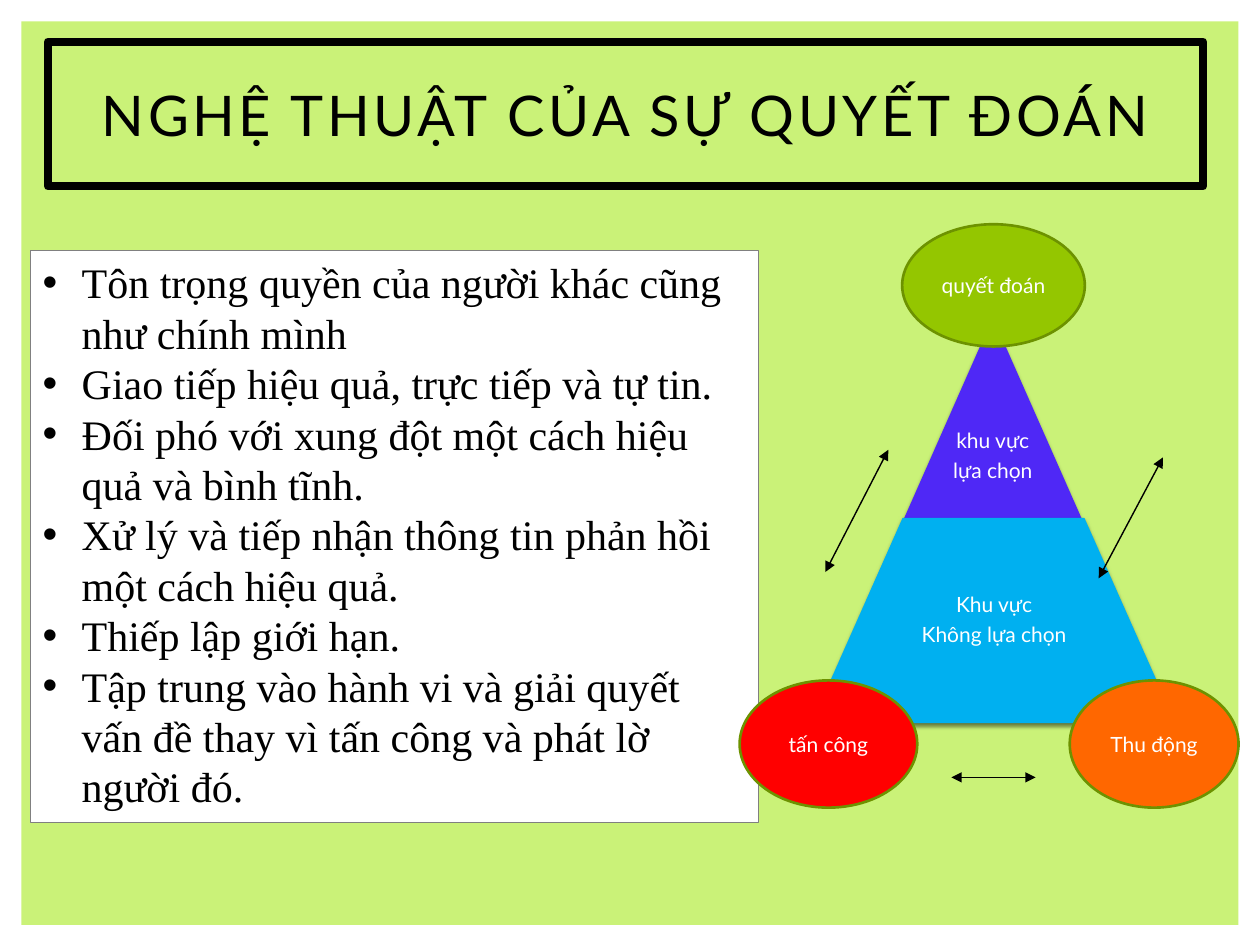
from dataclasses import dataclass

import pptx
import pptx.dml.color
import pptx.enum.shapes
import pptx.enum.text
import pptx.oxml
import pptx.oxml.ns
import pptx.util
from lxml import etree
from pptx.dml.color import RGBColor
from pptx.enum.shapes import MSO_SHAPE
from pptx.util import Inches, Pt

BLACK = RGBColor(0x00, 0x00, 0x00)
WHITE = RGBColor(0xFF, 0xFF, 0xFF)
GRAY = RGBColor(0x80, 0x80, 0x80)
LIME = RGBColor(0xCA, 0xF2, 0x78)
GREEN = RGBColor(0x94, 0xC6, 0x00)
DARK_GREEN = RGBColor(0x6D, 0x92, 0x00)
RED = RGBColor(0xFF, 0x00, 0x00)
ORANGE = RGBColor(0xFF, 0x67, 0x00)
VIOLET = RGBColor(0x4F, 0x28, 0xF6)
BLUE = RGBColor(0x00, 0xB0, 0xF0)

CENTER = pptx.enum.text.PP_ALIGN.CENTER
LEFT = pptx.enum.text.PP_ALIGN.LEFT
MIDDLE = pptx.enum.text.MSO_ANCHOR.MIDDLE
TOP = pptx.enum.text.MSO_ANCHOR.TOP
NAMESPACE = 'xmlns:a="http://schemas.openxmlformats.org/drawingml/2006/main"'


@dataclass(frozen=True)
class Box:
    left: float
    top: float
    width: float
    height: float

    def lengths(self):
        return [Inches(value) for value in (self.left, self.top, self.width, self.height)]


@dataclass(frozen=True)
class Attitude:
    label: str
    box: Box
    color: RGBColor


@dataclass(frozen=True)
class Zone:
    lines: tuple[str, ...]
    box: Box
    text_box: Box
    taper: float
    color: RGBColor


@dataclass(frozen=True)
class Arrow:
    start: tuple[float, float]
    end: tuple[float, float]


TITLE = "NGHỆ THUẬT CỦA SỰ QUYẾT ĐOÁN"
POINTS = (
    "Tôn trọng quyền của người khác cũng như chính mình",
    "Giao tiếp hiệu quả, trực tiếp và tự tin.",
    "Đối phó với xung đột một cách hiệu quả và bình tĩnh.",
    "Xử lý và tiếp nhận thông tin phản hồi một cách hiệu quả.",
    "Thiếp lập giới hạn.",
    "Tập trung vào hành vi và giải quyết vấn đề thay vì tấn công và phát lờ người đó.",
)
ZONES = (
    Zone(("khu vực", "lựa chọn"), Box(7.16, 2.52, 1.44, 1.63),
         Box(7.16, 3.1, 1.44, 1.05), 0.5, VIOLET),
    Zone(("Khu vực", "Không lựa chọn"), Box(6.44, 4.11, 2.89, 1.63),
         Box(6.95, 4.11, 1.88, 1.63), 0.444, BLUE),
)
ATTITUDES = (
    Attitude("quyết đoán", Box(7.16, 1.78, 1.45, 0.97), GREEN),
    Attitude("tấn công", Box(5.87, 5.4, 1.41, 1.01), RED),
    Attitude("Thu động", Box(8.49, 5.4, 1.34, 1.01), ORANGE),
)
ARROWS = (
    Arrow((6.55, 4.54), (7.05, 3.57)),
    Arrow((7.55, 6.17), (8.22, 6.17)),
    Arrow((8.72, 4.59), (9.23, 3.63)),
)


def add_figure(slide, kind, box: Box, fill=None, line=None, line_width: float = 0):
    shape = slide.shapes.add_shape(kind, *box.lengths())
    shape.shadow.inherit = False
    if fill is None:
        shape.fill.background()
    else:
        shape.fill.solid()
        shape.fill.fore_color.rgb = fill
    if line is None:
        shape.line.fill.background()
    else:
        shape.line.color.rgb = line
        shape.line.width = Pt(line_width)
    return shape


def write_lines(shape, lines, size, color=WHITE, font="Lato", align=CENTER, anchor=MIDDLE):
    """Write one paragraph per line and return the paragraphs."""
    frame = shape.text_frame
    frame.word_wrap = True
    frame.vertical_anchor = anchor
    for index, line in enumerate(lines):
        paragraph = frame.add_paragraph() if index else frame.paragraphs[0]
        paragraph.alignment = align
        run = paragraph.add_run()
        run.text = line
        run.font.size = Pt(size)
        run.font.name = font
        run.font.color.rgb = color
    return frame.paragraphs


def add_title(slide) -> None:
    shape = add_figure(slide, MSO_SHAPE.RECTANGLE, Box(0.38, 0.33, 9.17, 1.15),
                       line=BLACK, line_width=4.5)
    etree.SubElement(shape.line._get_or_add_ln(), pptx.oxml.ns.qn("a:round"))
    title = write_lines(shape, [TITLE], 32, BLACK)[0]
    title.runs[0].font._element.set("spc", "200")


def add_points(slide) -> None:
    shape = add_figure(slide, MSO_SHAPE.RECTANGLE, Box(0.24, 1.99, 5.78, 4.54),
                       WHITE, GRAY, 0.75)
    for paragraph in write_lines(shape, POINTS, 24, BLACK, "Times New Roman", LEFT, TOP):
        properties = paragraph._p.get_or_add_pPr()
        properties.set("marL", str(Inches(0.31)))
        properties.set("indent", str(-Inches(0.31)))
        for bullet in ('buFont {} typeface="Arial"', 'buChar {} char="•"'):
            properties.append(pptx.oxml.parse_xml(f"<a:{bullet.format(NAMESPACE)}/>"))


def add_zone(slide, zone: Zone) -> None:
    shape = add_figure(slide, MSO_SHAPE.TRAPEZOID, zone.box, zone.color)
    shape.adjustments[0] = zone.taper
    effects = shape._element.spPr.find(pptx.oxml.ns.qn("a:effectLst"))
    effects.append(pptx.oxml.parse_xml(
        f'<a:outerShdw {NAMESPACE} blurRad="{Pt(2.5)}" dist="{Pt(2)}" dir="5400000" '
        'rotWithShape="0"><a:srgbClr val="000000"><a:alpha val="50000"/></a:srgbClr>'
        '</a:outerShdw>'))
    label = slide.shapes.add_textbox(*zone.text_box.lengths())
    frame = label.text_frame
    frame.margin_left = frame.margin_right = Inches(0.02)
    frame.margin_top = frame.margin_bottom = Inches(0.02)
    for paragraph in write_lines(label, zone.lines, 12):
        paragraph.line_spacing = 0.9
        paragraph.space_after = Pt(4.2)


def add_attitude(slide, attitude: Attitude) -> None:
    shape = add_figure(slide, MSO_SHAPE.OVAL, attitude.box, attitude.color, DARK_GREEN, 1.5)
    write_lines(shape, [attitude.label], 12)


def add_arrow(slide, arrow: Arrow) -> None:
    """Draw a line with a triangle at both ends."""
    points = [Inches(value) for value in arrow.start + arrow.end]
    connector = slide.shapes.add_connector(
        pptx.enum.shapes.MSO_CONNECTOR.STRAIGHT, *points)
    connector.line.color.rgb = BLACK
    connector.line.width = Pt(0.79)
    line = connector.line._get_or_add_ln()
    for end in ("a:headEnd", "a:tailEnd"):
        etree.SubElement(line, pptx.oxml.ns.qn(end), type="triangle")
    etree.SubElement(connector._element.spPr, pptx.oxml.ns.qn("a:effectLst"))


def main() -> None:
    presentation = pptx.Presentation()
    presentation.slide_width = Inches(10)
    presentation.slide_height = Inches(7.5)
    slide = presentation.slides.add_slide(presentation.slide_layouts[6])
    add_figure(slide, MSO_SHAPE.RECTANGLE, Box(0.17, 0.17, 9.66, 7.17), LIME)
    add_title(slide)
    add_points(slide)
    for zone in ZONES:
        add_zone(slide, zone)
    for attitude in ATTITUDES:
        add_attitude(slide, attitude)
    for arrow in ARROWS:
        add_arrow(slide, arrow)
    presentation.save("out.pptx")


if __name__ == "__main__":
    main()
